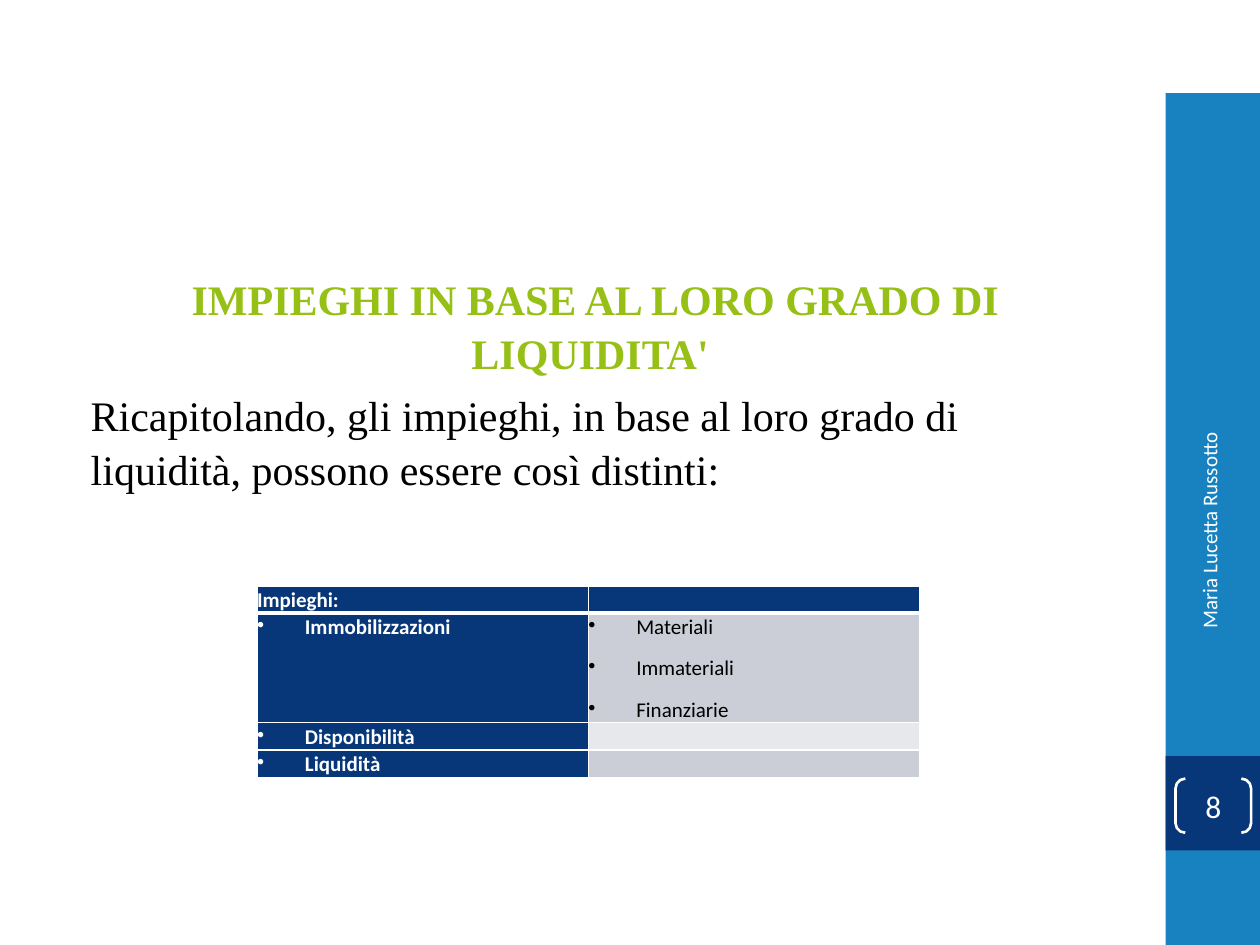
import pptx
import pptx.util
import pptx.dml.color
import pptx.enum.shapes
import pptx.enum.text
import pptx.oxml
from dataclasses import dataclass
from lxml import etree

Inches, Pt = pptx.util.Inches, pptx.util.Pt
Align, Anchor = pptx.enum.text.PP_ALIGN, pptx.enum.text.MSO_ANCHOR
Kind = pptx.enum.shapes.MSO_SHAPE
A = "http://schemas.openxmlformats.org/drawingml/2006/main"


@dataclass(frozen=True)
class Theme:
    blue: str = "1782BF"
    navy: str = "073779"
    green: str = "96C015"
    black: str = "000000"
    white: str = "FFFFFF"
    band: str = "CCCED7"
    pale: str = "E7E8EC"
    serif: str = "Times New Roman"
    sans: str = "Calibri"
    body: int = 24
    page: int = 18
    small: int = 12
    lead: float = 1.07


T = Theme()


def rgb(code):
    return pptx.dml.color.RGBColor.from_string(code)


def place(box):
    return [Inches(n) for n in box]


def add_run(para, text, size, color, face=T.sans, bold=False):
    run = para.add_run()
    run.text = text
    font = run.font
    font.size, font.name, font.bold = Pt(size), face, bold
    font.color.rgb = rgb(color)


def add_bar(slide, box, color):
    bar = slide.shapes.add_shape(Kind.RECTANGLE, *place(box))
    bar.shadow.inherit = False
    bar.fill.solid()
    bar.fill.fore_color.rgb = rgb(color)
    bar.line.fill.background()


def add_body(slide):
    body = slide.placeholders[1]
    body.left, body.top, body.width, body.height = place((0.5, 1.58, 8.33, 5.25))
    frame = body.text_frame
    frame.margin_top = Inches(0.56)
    parts = [
        ("IMPIEGHI IN BASE AL LORO GRADO DI LIQUIDITA' ", T.green, True, Align.CENTER),
        ("Ricapitolando, gli impieghi, in base al loro grado di liquidità, "
         "possono essere così distinti:", T.black, False, Align.LEFT),
    ]
    for i, (text, color, bold, align) in enumerate(parts):
        para = frame.add_paragraph() if i else frame.paragraphs[0]
        para.alignment, para.line_spacing = align, T.lead
        para.space_before = Pt(5 if i else 0)
        props = para._p.get_or_add_pPr()
        props.set("marL", str(Inches(0.12)))
        props.set("indent", "0")
        etree.SubElement(props, f"{{{A}}}buNone")
        add_run(para, text, T.body, color, T.serif, bold)


def add_name(slide):
    box = slide.shapes.add_textbox(*place((8.3, 4.43, 2.59, 0.4)))
    box.rotation = 270
    frame = box.text_frame
    frame.word_wrap = True
    frame.vertical_anchor = Anchor.MIDDLE
    para = frame.paragraphs[0]
    para.alignment = Align.RIGHT
    add_run(para, "Maria Lucetta Russotto", T.small, T.white)


def add_page(slide):
    mark = slide.shapes.add_shape(Kind.DOUBLE_BRACKET, *place((9.33, 6.18, 0.6, 0.43)))
    mark.adjustments[0] = 0.18
    mark.shadow.inherit = False
    mark.fill.background()
    mark.line.color.rgb = rgb(T.white)
    mark.line.width = Pt(1.5)
    frame = mark.text_frame
    frame.margin_left = frame.margin_right = frame.margin_top = frame.margin_bottom = 0
    frame.vertical_anchor = Anchor.MIDDLE
    para = frame.paragraphs[0]
    para.alignment = Align.CENTER
    add_run(para, "8", T.page, T.white)


def add_edges(cell, base):
    props = cell._tc.get_or_add_tcPr()
    for side in "LRTB":
        width = base if side == "B" else 1
        props.append(pptx.oxml.parse_xml(
            f'<a:ln{side} xmlns:a="{A}" w="{Pt(width)}"><a:solidFill>'
            f'<a:srgbClr val="{T.white}"/></a:solidFill></a:ln{side}>'))


def add_dot(para):
    props = para._p.get_or_add_pPr()
    props.set("marL", str(Inches(0.38)))
    props.set("indent", str(-Inches(0.38)))
    etree.SubElement(props, f"{{{A}}}buChar", char="•")
    tabs = etree.SubElement(props, f"{{{A}}}tabLst")
    etree.SubElement(tabs, f"{{{A}}}tab", pos=str(Inches(0.5)), algn="l")


def fill_cell(cell, items, fill, color, bold, head):
    cell.margin_left = cell.margin_right = cell.margin_top = cell.margin_bottom = 0
    add_edges(cell, 3 if head else 1)
    cell.fill.solid()
    cell.fill.fore_color.rgb = rgb(fill)
    frame = cell.text_frame
    for i, text in enumerate(items):
        para = frame.add_paragraph() if i else frame.paragraphs[0]
        para.line_spacing = T.lead
        if not head:
            para.space_after = Pt(8)
            add_dot(para)
        add_run(para, text, T.small, color, bold=bold)
    if not items:
        # An empty cell keeps the small type so its row stays low
        etree.SubElement(frame.paragraphs[0]._p, f"{{{A}}}endParaRPr",
                         sz=str(T.small * 100))


def add_grid(slide):
    rows = [
        (0.21, ["Impieghi:"], [], T.navy),
        (0.87, ["Immobilizzazioni"], ["Materiali", "Immateriali", "Finanziarie"], T.band),
        (0.22, ["Disponibilità"], [], T.pale),
        (0.22, ["Liquidità"], [], T.band),
    ]
    high = sum(row[0] for row in rows)
    grid = slide.shapes.add_table(len(rows), 2, *place((2.04, 4.65, 5.26, high))).table
    grid.first_col = True
    for i, (tall, left, right, fill) in enumerate(rows):
        grid.rows[i].height = Inches(tall)
        fill_cell(grid.cell(i, 0), left, T.navy, T.white, True, i == 0)
        fill_cell(grid.cell(i, 1), right, fill, T.black, False, i == 0)


def main():
    deck = pptx.Presentation()
    deck.slide_width, deck.slide_height = Inches(10), Inches(7.5)
    slide = deck.slides.add_slide(deck.slide_layouts[1])
    # The heading sits in the body, so the title holder goes
    title = slide.shapes.title._element
    title.getparent().remove(title)
    # Side band
    add_bar(slide, (9.25, 0.74, 0.75, 6.76), T.blue)
    add_bar(slide, (9.25, 6, 0.75, 0.75), T.navy)
    # Text, author and page number
    add_body(slide)
    add_name(slide)
    add_page(slide)
    # Table of uses
    add_grid(slide)
    deck.save("out.pptx")


if __name__ == "__main__":
    main()
